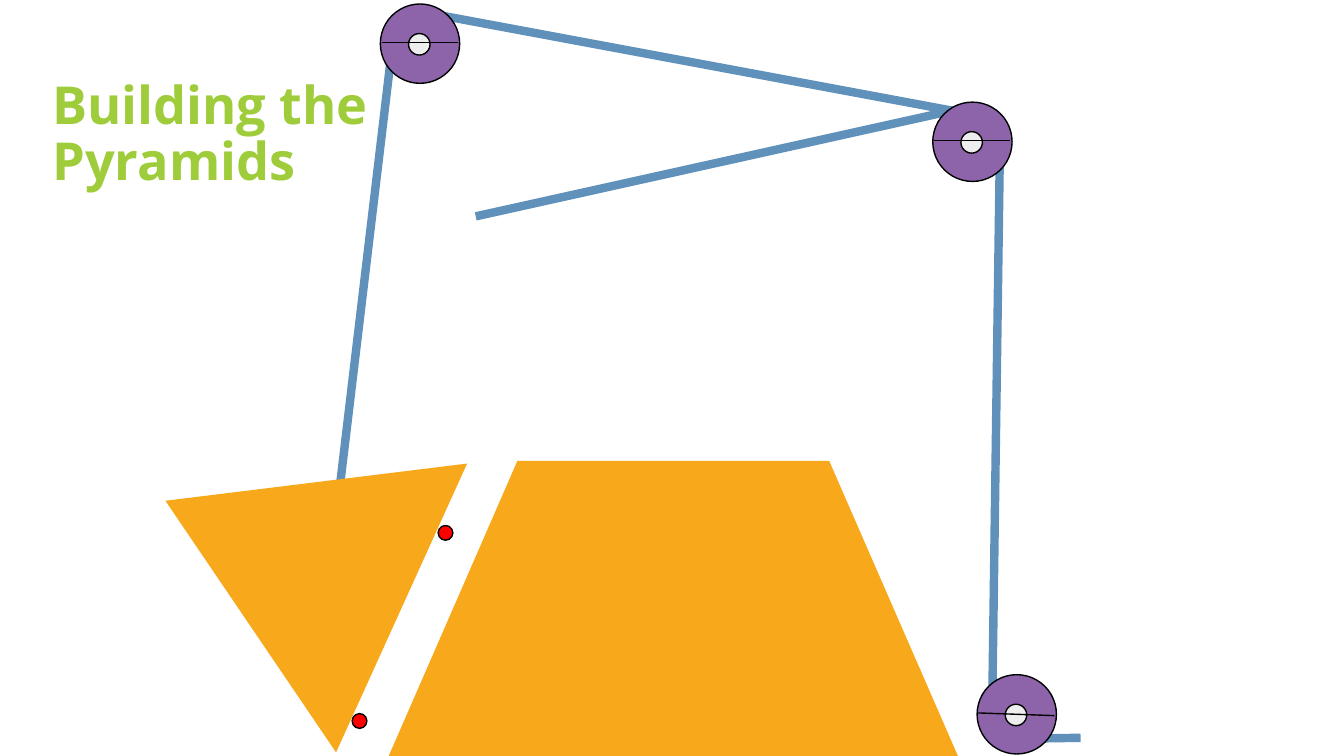
from dataclasses import dataclass
from typing import NamedTuple

from lxml.etree import SubElement
from pptx import Presentation
from pptx.dml.color import RGBColor
from pptx.enum.shapes import MSO_CONNECTOR as Connector, MSO_SHAPE as Preset
from pptx.enum.text import MSO_ANCHOR as Anchor, MSO_AUTO_SIZE as AutoSize, PP_ALIGN as Align
from pptx.oxml.ns import qn
from pptx.shapes.autoshape import Shape
from pptx.shapes.shapetree import SlideShapes
from pptx.util import Inches, Pt

COLUMNS, ROWS = 100, 56.25
CELL = Inches(0.1)


@dataclass(frozen=True)
class Theme:
    title: str = "9FCC3B"
    rope: str = "6091BA"
    stone: str = "F8A81B"
    wheel: str = "8D64AA"
    hub: str = "EEEEEE"
    marker: str = "FF0000"
    outline: str = "000000"
    font: str = "Open Sans"
    title_size: float = 28
    rope_width: float = 4.5
    outline_width: float = 0.75


class Point(NamedTuple):
    column: float
    row: float

    def shifted(self, columns: float, rows: float) -> "Point":
        return Point(self.column + columns, self.row + rows)


class Segment(NamedTuple):
    start: Point
    end: Point


class Pulley(NamedTuple):
    corner: Point
    spoke_drop: float = 0


THEME = Theme()
WHEEL_SIZE, HUB_SIZE, MARKER_SIZE = 5.9, 1.6, 1.1

ROPES = [
    Segment(Point(25.3, 36.1), Point(29.3, 2.5)),
    Segment(Point(71.9, 8), Point(35.4, 16.1)),
    Segment(Point(71.2, 8.3), Point(32, 1)),
    Segment(Point(73.8, 54.5), Point(74.4, 11)),
    Segment(Point(73.7, 55), Point(80.4, 54.9)),
]
PULLEYS = [
    Pulley(Point(69.4, 7.6)),
    Pulley(Point(72.7, 50.2), spoke_drop=0.2),
    Pulley(Point(28.3, 0.3)),
]
BASE_CORNERS = [Point(26.9, 60.9), Point(38.5, 34.3), Point(61.7, 34.3), Point(73.3, 60.9)]
MARKERS = [Point(26.2, 53.1), Point(32.6, 39.1)]


def grid(cells: float) -> int:
    return round(cells * CELL)


def paint(shape: Shape, fill: str, outlined: bool = False) -> None:
    shape.shadow.inherit = False
    shape.fill.solid()
    shape.fill.fore_color.rgb = RGBColor.from_string(fill)
    if outlined:
        shape.line.color.rgb = RGBColor.from_string(THEME.outline)
        shape.line.width = Pt(THEME.outline_width)
    else:
        shape.line.fill.background()


def draw_line(shapes: SlideShapes, segment: Segment, color: str, width: float) -> None:
    ends = [grid(length) for point in segment for length in point]
    line = shapes.add_connector(Connector.STRAIGHT, *ends)
    line.line.color.rgb = RGBColor.from_string(color)
    line.line.width = Pt(width)
    SubElement(line._element.spPr, qn("a:effectLst"))


def draw_disc(shapes: SlideShapes, corner: Point, size: float, fill: str) -> None:
    disc = shapes.add_shape(Preset.OVAL, *map(grid, (*corner, size, size)))
    paint(disc, fill, outlined=True)


def draw_pulley(shapes: SlideShapes, pulley: Pulley) -> None:
    draw_disc(shapes, pulley.corner, WHEEL_SIZE, THEME.wheel)
    draw_disc(shapes, pulley.corner.shifted(2.1, 2.2), HUB_SIZE, THEME.hub)
    spoke = Segment(
        pulley.corner.shifted(0.1, 2.85),
        pulley.corner.shifted(5.75, 2.85 + pulley.spoke_drop),
    )
    draw_line(shapes, spoke, THEME.outline, THEME.outline_width)


def draw_base(shapes: SlideShapes) -> None:
    corners = [(grid(column), grid(row)) for column, row in BASE_CORNERS]
    outline = shapes.build_freeform(*corners[0])
    outline.add_line_segments(corners[1:], close=True)
    paint(outline.convert_to_shape(), THEME.stone)


def draw_capstone(shapes: SlideShapes) -> None:
    capstone = shapes.add_shape(Preset.ISOSCELES_TRIANGLE, *map(grid, (9.3, 31.6, 23.6, 19.3)))
    capstone.rotation = 294.4
    paint(capstone, THEME.stone)


def write_title(title: Shape) -> None:
    title.left, title.top, title.width, title.height = map(grid, (2.9, 4.9, 93.2, 6.3))
    frame = title.text_frame
    frame.text = "Building the\vPyramids"
    frame.word_wrap = True
    frame.auto_size = AutoSize.NONE
    frame.vertical_anchor = Anchor.TOP
    frame.margin_left = frame.margin_right = frame.margin_top = frame.margin_bottom = CELL
    heading = frame.paragraphs[0]
    heading.alignment = Align.LEFT
    heading.line_spacing = 0.9
    for run in heading.runs:
        run.font.name = THEME.font
        run.font.size = Pt(THEME.title_size)
        run.font.bold = True
        run.font.color.rgb = RGBColor.from_string(THEME.title)


def main() -> None:
    deck = Presentation()
    deck.slide_width, deck.slide_height = grid(COLUMNS), grid(ROWS)
    slide = deck.slides.add_slide(deck.slide_layouts.get_by_name("Title Only"))
    write_title(slide.shapes.title)
    for rope in ROPES:
        draw_line(slide.shapes, rope, THEME.rope, THEME.rope_width)
    draw_base(slide.shapes)
    draw_capstone(slide.shapes)
    for marker in MARKERS:
        draw_disc(slide.shapes, marker, MARKER_SIZE, THEME.marker)
    for pulley in PULLEYS:
        draw_pulley(slide.shapes, pulley)
    deck.save("out.pptx")


if __name__ == "__main__":
    main()
